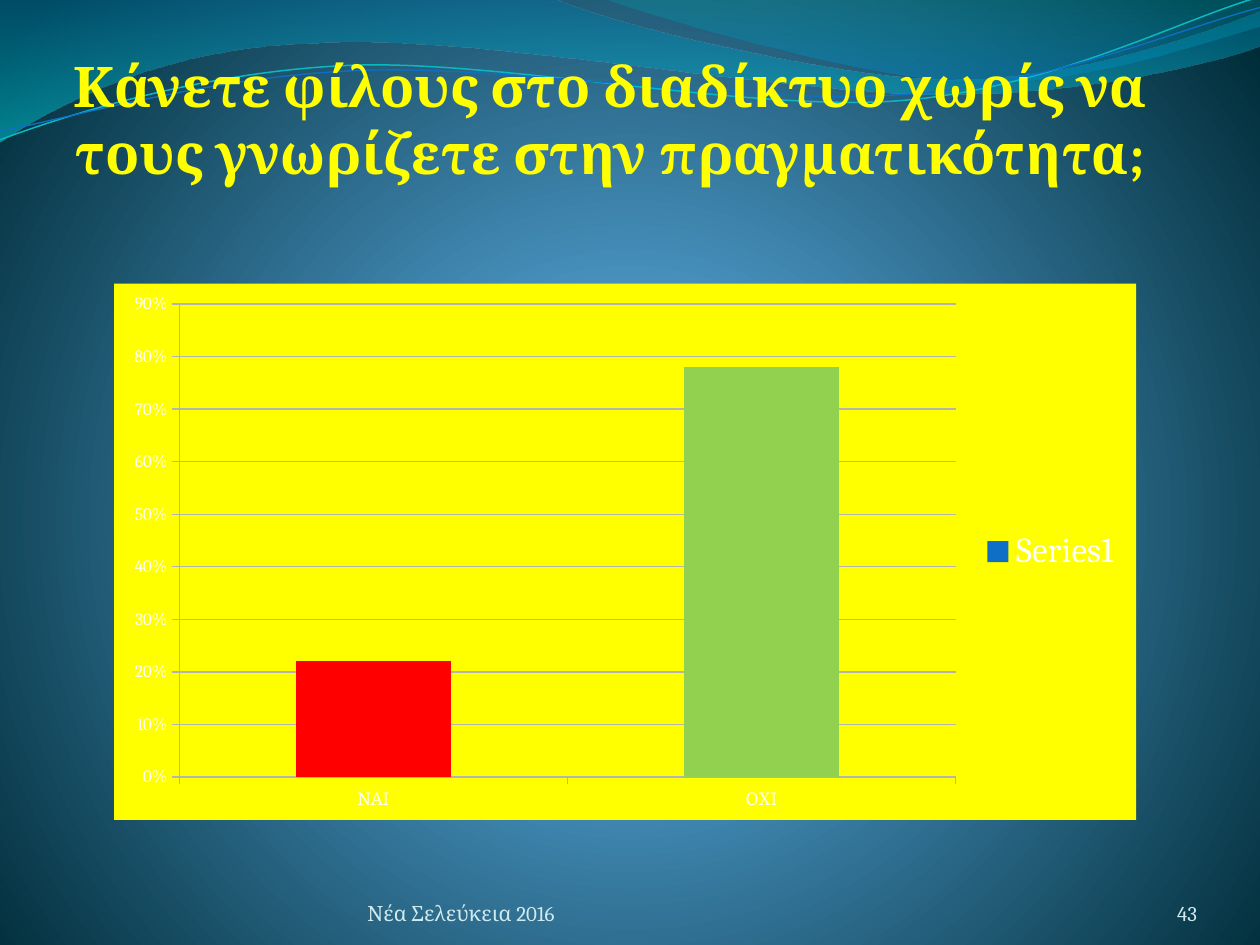
from dataclasses import dataclass

from pptx import Presentation
from pptx.chart.data import CategoryChartData
from pptx.dml.color import RGBColor
from pptx.enum.chart import XL_CHART_TYPE as ChartType, XL_LEGEND_POSITION as LegendSide
from pptx.enum.chart import XL_TICK_MARK as Tick
from pptx.enum.text import MSO_ANCHOR as Anchor, PP_ALIGN as Align
from pptx.oxml import parse_xml
from pptx.oxml.ns import nsdecls, qn
from pptx.util import Pt


@dataclass(frozen=True)
class Theme:
    font: str = "Cambria"
    title: str = "FFFF00"
    footer: str = "D1EAEE"
    panel: str = "FFFF00"
    label: str = "FFFFFF"
    grid: str = "B3B3B3"
    series: str = "0F6FC6"
    bars: tuple = ("FF0000", "92D050")
    glow: tuple = ((0, "4AA0D6", 100), (25, "4C98C7", 100), (100, "002C38", 100))
    wide_wave: tuple = ((0, "0074A1", 45), (100, "00C6CF", 55))
    right_wave: tuple = ((0, "00A1A9", 30), (80, "008BBF", 45))
    strand: str = "0AB8BF"
    title_size: int = 32
    legend_size: int = 20
    footer_size: int = 12
    axis_size: int = 10


THEME = Theme()
RADIAL = '<a:path path="circle"><a:fillToRect l="10000" t="110000" r="10000" b="100000"/></a:path>'
VERTICAL = '<a:lin ang="5400000" scaled="0"/>'

WIDE_WAVE = [
    (0, 0), (316.8, -0.7),
    (342.7, 12.2, 478.1, 45.4, 545.8, 45.4), (614.2, 45.4, 689.8, 18.7, 720, 6.5),
    (720.7, 25.9),
    (707.8, 31.7, 626.4, 54.7, 537.1, 54), (447.8, 54, 275, 20.2, 185, 24.5),
    (92.9, 25.9, 33.1, 59.8, -0.7, 81.4), (0, 0),
]
RIGHT_WAVE = [
    (344.9, -0.7),
    (366.5, 7.9, 491, 44.6, 553.7, 46.8), (616.3, 49.7, 691.9, 23, 720, 15.1),
    (720, 0), (344.9, -0.7),
]
UPPER_STRAND = [
    (0, 79.9),
    (34.6, 67, 113.8, 41, 199.4, 37.4), (284.4, 33.8, 427, 64.1, 513.4, 57.6),
    (599.8, 51.1, 675.4, 10.8, 718.6, -1.4),
]
LOWER_STRAND = [
    (0, 74.9),
    (33.8, 69.1, 118.1, 43.9, 203.8, 40.3), (290.2, 36.7, 429.8, 60.5, 516.2, 54),
    (601.9, 48.2, 677.5, 15.1, 720, 4.3),
]


def rgb(color):
    return RGBColor.from_string(color)


def set_gradient(parent, stops, shade):
    marks = "".join(
        f'<a:gs pos="{place * 1000}"><a:srgbClr val="{color}">'
        f'<a:alpha val="{alpha * 1000}"/></a:srgbClr></a:gs>'
        for place, color, alpha in stops)
    gradient = parse_xml(
        f'<a:gradFill {nsdecls("a")} rotWithShape="1"><a:gsLst>{marks}</a:gsLst>{shade}</a:gradFill>')
    parent.replace(parent.find(qn("a:solidFill")), gradient)


def set_font(font, size, color, bold=False):
    font.name, font.size, font.bold = THEME.font, Pt(size), bold
    font.color.rgb = rgb(color)


def write(frame, text, size, color, bold=False, align=Align.LEFT):
    para = frame.paragraphs[0]
    para.alignment = align
    span = para.add_run()
    span.text = text
    set_font(span.font, size, color, bold)


def bend(shape, segments):
    lines = iter(list(shape.element.iter(qn("a:lnTo"))))
    for segment in segments[1:]:
        group = [next(lines) for _ in range(len(segment) // 2)]
        if len(group) == 3:
            curve = parse_xml(f'<a:cubicBezTo {nsdecls("a")}/>')
            group[0].addprevious(curve)
            for line in group:
                curve.append(line[0])
                line.getparent().remove(line)


class Page:
    """One slide and the methods that draw on it in the theme's style."""

    def __init__(self, deck):
        self.slide = deck.slides.add_slide(deck.slide_layouts[6])
        self.shapes = self.slide.shapes

    def backdrop(self, stops):
        self.slide.background.fill.solid()
        set_gradient(next(self.slide.element.iter(qn("p:bgPr"))), stops, RADIAL)

    def outline(self, segments, close):
        start, *others = [(Pt(x), Pt(y)) for segment in segments
                          for x, y in zip(segment[::2], segment[1::2])]
        builder = self.shapes.build_freeform(*start)
        builder.add_line_segments(others, close=close)
        shape = builder.convert_to_shape()
        bend(shape, segments)
        shape.shadow.inherit = False
        return shape

    def wave(self, segments, stops):
        shape = self.outline(segments, close=True)
        shape.line.fill.background()
        shape.fill.solid()
        set_gradient(shape.element.spPr, stops, VERTICAL)

    def strand(self, segments, color, width):
        shape = self.outline(segments, close=False)
        shape.fill.background()
        shape.line.color.rgb = rgb(color)
        shape.line.width = Pt(width)

    def text(self, area, text, inset=None, anchor=Anchor.TOP, **style):
        frame = self.shapes.add_textbox(*map(Pt, area)).text_frame
        frame.word_wrap = True
        frame.vertical_anchor = anchor
        if inset is not None:
            frame.margin_left = frame.margin_right = Pt(inset)
            frame.margin_top = frame.margin_bottom = Pt(inset)
        write(frame, text, **style)

    def footer(self, area, text, align=Align.LEFT):
        self.text(area, text, inset=0, anchor=Anchor.BOTTOM, align=align,
                  size=THEME.footer_size, color=THEME.footer)

    def columns(self, area, answers):
        data = CategoryChartData(number_format="0%")
        data.categories = list(answers)
        data.add_series("", answers.values())
        chart = self.shapes.add_chart(ChartType.COLUMN_STACKED, *map(Pt, area), data).chart
        set_font(chart.font, THEME.axis_size, THEME.label)
        chart.has_title = False
        chart.has_legend = True
        chart.legend.position = LegendSide.RIGHT
        chart.legend.include_in_layout = False
        set_font(chart.legend.font, THEME.legend_size, THEME.label)

        plot = chart.plots[0]
        plot.gap_width, plot.overlap, plot.vary_by_categories = 150, 100, False
        series = plot.series[0]
        for item, color in [(series, THEME.series),
                            *((series.points[i], bar) for i, bar in enumerate(THEME.bars))]:
            item.format.fill.solid()
            item.format.fill.fore_color.rgb = rgb(color)
        unnamed = next(chart.element.iter(qn("c:ser")))
        unnamed.remove(unnamed.find(qn("c:tx")))

        values = chart.value_axis
        values.minimum_scale, values.maximum_scale, values.major_unit = 0, 0.9, 0.1
        values.tick_labels.number_format = "0%"
        values.tick_labels.number_format_is_linked = False
        values.major_gridlines.format.line.color.rgb = rgb(THEME.grid)
        for axis in (values, chart.category_axis):
            axis.major_tick_mark = Tick.OUTSIDE
            axis.format.line.color.rgb = rgb(THEME.grid)

        panel = parse_xml(
            f'<c:spPr {nsdecls("c", "a")}><a:solidFill><a:srgbClr val="{THEME.panel}"/>'
            '</a:solidFill><a:ln><a:noFill/></a:ln></c:spPr>')
        chart.element.find(qn("c:chart")).addnext(panel)


def main():
    deck = Presentation()
    deck.slide_width, deck.slide_height = Pt(720), Pt(540)
    page = Page(deck)
    page.backdrop(THEME.glow)
    page.wave(WIDE_WAVE, THEME.wide_wave)
    page.wave(RIGHT_WAVE, THEME.right_wave)
    page.strand(UPPER_STRAND, THEME.strand, 0.85)
    page.strand(LOWER_STRAND, THEME.series, 0.75)
    page.text((20, 26, 657.5, 85),
              "Κάνετε φίλους στο διαδίκτυο χωρίς να τους γνωρίζετε στην πραγματικότητα;",
              size=THEME.title_size, color=THEME.title, bold=True, align=Align.CENTER)
    page.columns((65.2, 162, 584, 306.5), {"ΝΑΙ": 0.22, "ΟΧΙ": 0.78})
    page.footer((210, 500.5, 264, 28.75), "Νέα Σελεύκεια 2016")
    page.footer((624, 500.5, 60, 28.75), "43", align=Align.RIGHT)
    deck.save("out.pptx")


if __name__ == "__main__":
    main()
